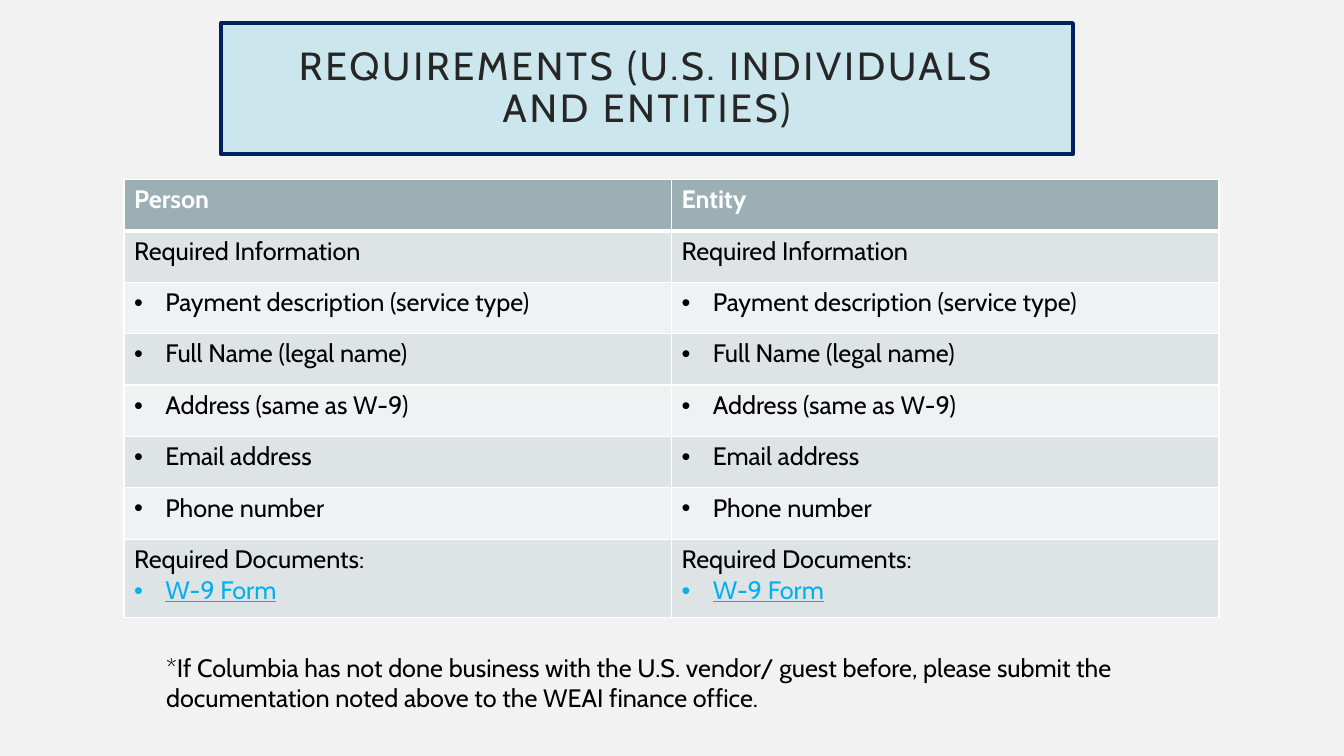
from dataclasses import dataclass

from lxml.etree import SubElement
from pptx import Presentation
from pptx.dml.color import RGBColor as RGB
from pptx.enum.text import MSO_ANCHOR as Anchor, MSO_AUTO_SIZE as Fit, PP_ALIGN as Align
from pptx.oxml.ns import qn
from pptx.util import Inches, Pt

FONT = "Cabin"
PAGE = RGB(0xF2, 0xF2, 0xF2)
SKY = RGB(0xCB, 0xE7, 0xED)
NAVY = RGB(0x00, 0x20, 0x60)
INK = RGB(0x26, 0x26, 0x26)
BLACK = RGB(0x00, 0x00, 0x00)
WHITE = RGB(0xFF, 0xFF, 0xFF)
SLATE = RGB(0x9B, 0xAF, 0xB5)
DARK = RGB(0xDE, 0xE3, 0xE5)
LIGHT = RGB(0xEF, 0xF2, 0xF3)
LINK = RGB(0x00, 0xB0, 0xF0)


@dataclass
class Item:
    text: str
    color: RGB = BLACK
    bold: bool = False
    bullet: bool = False
    line: bool = False


@dataclass
class Row:
    cells: list[list[Item]]
    height: float = 0.51


def same(*items: Item, height: float = 0.51) -> Row:
    """Row with the same items under Person and Entity."""
    return Row([list(items)] * 2, height)


ROWS = [
    Row([[Item(name, WHITE, bold=True)] for name in ("Person", "Entity")]),
    same(Item("Required Information")),
    *(same(Item(text, bullet=True)) for text in (
        "Payment description (service type)",
        "Full Name (legal name)",
        "Address (same as W-9)",
        "Email address",
        "Phone number",
    )),
    same(Item("Required Documents:"),
         Item("W-9 Form", LINK, bullet=True, line=True), height=0.78),
]


def write(para, text: str, *, size: float = 18, color: RGB = BLACK, bold: bool = False,
          line: bool = False, bullet: bool = False, space: float = 0) -> None:
    if bullet:
        props = para._p.get_or_add_pPr()
        props.set("marL", str(Inches(0.31)))
        props.set("indent", str(-Inches(0.31)))
        SubElement(props, qn("a:buFont"), typeface="Arial")
        SubElement(props, qn("a:buChar"), char="•")
    run = para.add_run()
    run.text = text
    font = run.font
    font.name, font.size, font.bold, font.underline = FONT, Pt(size), bold, line
    font.color.rgb = color
    if space:
        run._r.get_or_add_rPr().set("spc", str(round(space * 100)))


def edge(cell, top: float, base: float) -> None:
    """Give a cell white borders, with top and base widths in points."""
    props = cell._tc.get_or_add_tcPr()
    for side, width in (("L", 1), ("R", 1), ("T", top), ("B", base)):
        rule = SubElement(props, qn(f"a:ln{side}"), w=str(Pt(width)))
        fill = SubElement(rule, qn("a:solidFill"))
        SubElement(fill, qn("a:srgbClr"), val=str(WHITE))


def add_title(slide) -> None:
    title = slide.shapes.title
    title.left, title.top = Inches(2.19), Inches(0.23)
    title.width, title.height = Inches(8.45), Inches(1.3)
    title.fill.solid()
    title.fill.fore_color.rgb = SKY
    title.line.color.rgb = NAVY
    title.line.width = Pt(3)
    frame = title.text_frame
    frame.word_wrap = True
    frame.auto_size = Fit.NONE
    frame.vertical_anchor = Anchor.MIDDLE
    frame.margin_left = frame.margin_right = Inches(0.3)
    frame.margin_top = frame.margin_bottom = Inches(0.2)
    para = frame.paragraphs[0]
    para.alignment = Align.CENTER
    para.line_spacing = 0.9
    write(para, "REQUIREMENTS (U.S. INDIVIDUALS AND ENTITIES)",
          size=28, color=INK, space=2)


def add_grid(slide) -> None:
    height = sum(row.height for row in ROWS)
    table = slide.shapes.add_table(len(ROWS), 2, Inches(1.23), Inches(1.78),
                                   Inches(10.86), Inches(height)).table
    for r, row in enumerate(ROWS):
        table.rows[r].height = Inches(row.height)
        for c, items in enumerate(row.cells):
            cell = table.cell(r, c)
            edge(cell, top=3 if r == 1 else 1, base=3 if r == 0 else 1)
            cell.fill.solid()
            cell.fill.fore_color.rgb = SLATE if r == 0 else DARK if r % 2 else LIGHT
            frame = cell.text_frame
            for i, item in enumerate(items):
                para = frame.add_paragraph() if i else frame.paragraphs[0]
                write(para, item.text, color=item.color, bold=item.bold,
                      line=item.line, bullet=item.bullet)


def add_note(slide) -> None:
    box = slide.shapes.add_textbox(Inches(1.55), Inches(6.42), Inches(10.23), Inches(0.71))
    frame = box.text_frame
    frame.word_wrap = True
    frame.auto_size = Fit.SHAPE_TO_FIT_TEXT
    write(frame.paragraphs[0],
          "*If Columbia has not done business with the U.S. vendor/ guest before, "
          "please submit the documentation noted above to the WEAI finance office.")


def main() -> None:
    deck = Presentation()
    deck.slide_width, deck.slide_height = Inches(13.33), Inches(7.5)
    slide = deck.slides.add_slide(deck.slide_layouts.get_by_name("Title Only"))
    slide.background.fill.solid()
    slide.background.fill.fore_color.rgb = PAGE
    add_title(slide)
    add_grid(slide)
    add_note(slide)
    deck.save("out.pptx")


if __name__ == "__main__":
    main()
